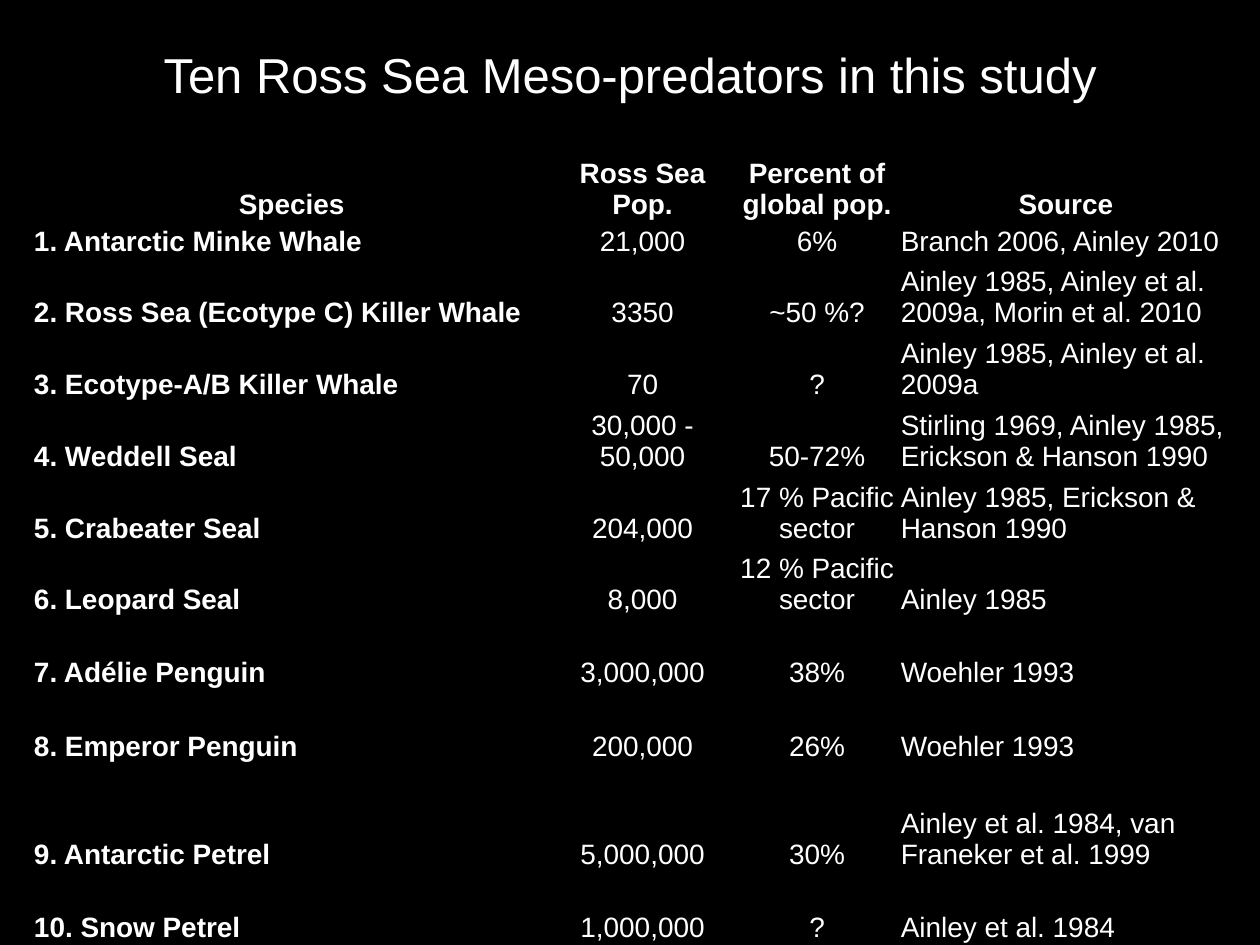
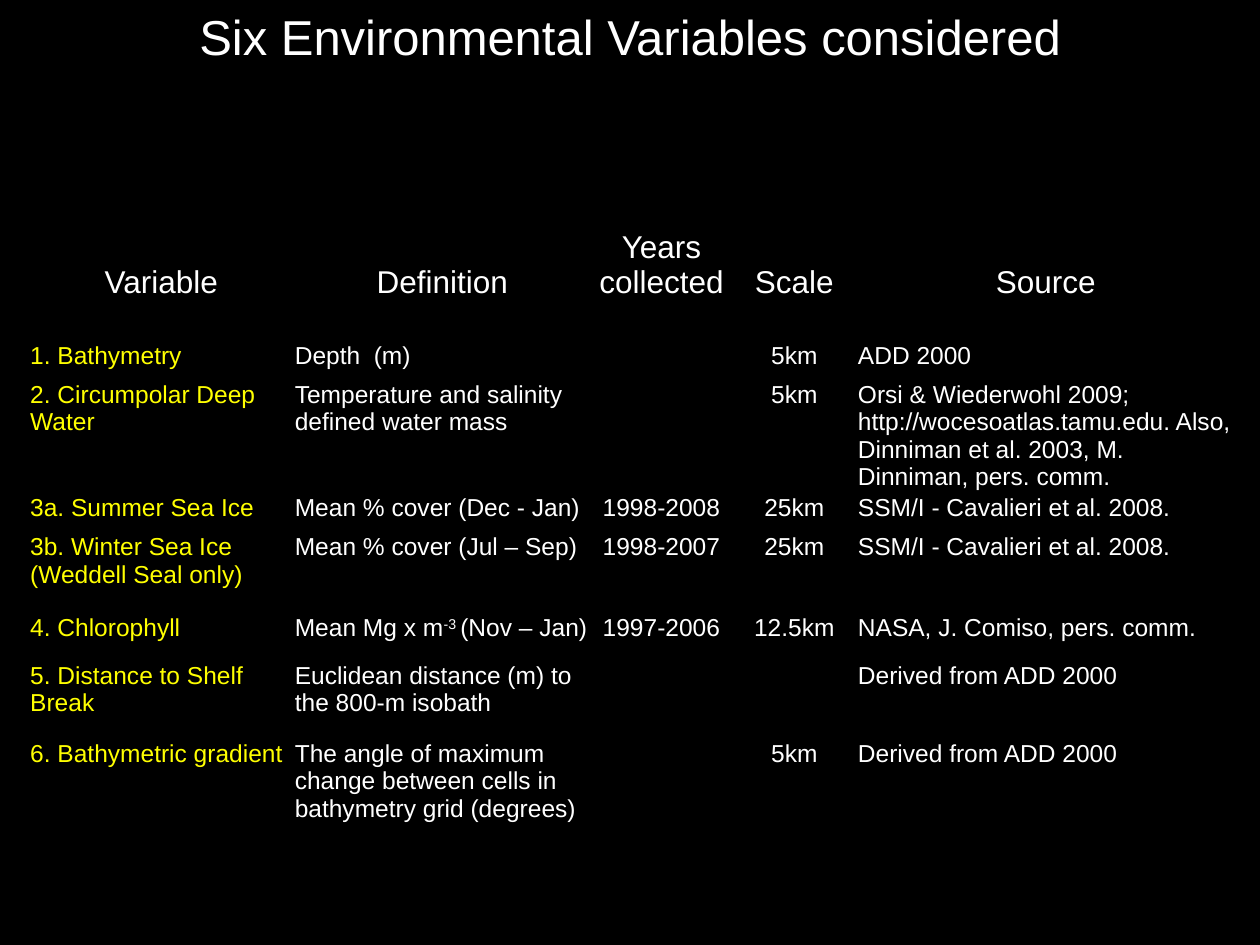
from lxml import etree
from pptx import Presentation
from pptx.dml.color import RGBColor
from pptx.enum.text import MSO_ANCHOR, PP_ALIGN
from pptx.oxml.ns import qn
from pptx.util import Inches, Pt

LEFT, CENTER = PP_ALIGN.LEFT, PP_ALIGN.CENTER
TOP, BOTTOM = MSO_ANCHOR.TOP, MSO_ANCHOR.BOTTOM

COLORS = {"background": "000000", "text": "FFFFFF", "variable": "FFFF00"}
FONT = "Arial"
TITLE_SIZE = 28
NO_STYLE_NO_GRID = "{2D5ABB26-0587-4C30-8999-92F81FD0307C}"
CELL_MARGINS = {"margin_left": 0.01, "margin_right": 0.01, "margin_top": 0.01, "margin_bottom": 0}
TITLE_ONLY_LAYOUT = 5

GAP = ("", "", "", "")
PREDATORS = [
    ("Species", "Ross Sea Pop.", "Percent of global pop.", "Source"),
    ("1. Antarctic Minke Whale", "21,000", "6%", "Branch 2006, Ainley 2010"),
    ("2. Ross Sea (Ecotype C) Killer Whale", "3350", "~50 %?",
     "Ainley 1985, Ainley et al. 2009a, Morin et al. 2010"),
    ("3. Ecotype-A/B Killer Whale", "70", "?", "Ainley 1985, Ainley et al. 2009a"),
    ("4. Weddell Seal", "30,000 - 50,000", "50-72%",
     "Stirling 1969, Ainley 1985, Erickson & Hanson 1990"),
    ("5. Crabeater Seal", "204,000", "17 % Pacific sector", "Ainley 1985, Erickson & Hanson 1990"),
    ("6. Leopard Seal", "8,000", "12 % Pacific sector", "Ainley 1985"),
    GAP,
    ("7. Adélie Penguin", "3,000,000", "38%", "Woehler 1993"),
    GAP,
    ("8. Emperor Penguin", "200,000", "26%", "Woehler 1993"),
    GAP,
    ("9. Antarctic Petrel", "5,000,000", "30%", "Ainley et al. 1984, van Franeker et al. 1999"),
    GAP,
    ("10. Snow Petrel", "1,000,000", "?", "Ainley et al. 1984"),
]
# A tuple in a cell holds runs; every second run is superscript.
VARIABLES = [
    ("", "Definition", "Years collected", "Scale", "Source"),
    ("Variable", "", "", "", ""),
    ("", "", "", "", ""),
    ("1. Bathymetry", "Depth  (m)", "", "5km", "ADD 2000"),
    ("2. Circumpolar Deep Water", "Temperature and salinity defined water mass", "", "5km",
     "Orsi & Wiederwohl 2009; http://wocesoatlas.tamu.edu. Also, "
     "Dinniman et al. 2003, M. Dinniman, pers. comm."),
    ("3a. Summer Sea Ice", "Mean % cover (Dec - Jan)", "1998-2008", "25km",
     "SSM/I - Cavalieri et al. 2008."),
    ("3b. Winter Sea Ice (Weddell Seal only)", "Mean % cover (Jul – Sep)", "1998-2007", "25km",
     "SSM/I - Cavalieri et al. 2008."),
    ("4. Chlorophyll", ("Mean Mg x m", "-3 ", "(Nov – Jan)"), "1997-2006", "12.5km",
     "NASA, J. Comiso, pers. comm."),
    ("5. Distance to Shelf Break", "Euclidean distance (m) to the 800-m isobath", "", "",
     "Derived from ADD 2000"),
    ("6. Bathymetric gradient",
     "The angle of maximum change between cells in bathymetry grid (degrees)", "", "5km",
     "Derived from ADD 2000"),
]

SHORT_ROW, TALL_ROW = 0.29, 0.57
TALL_PREDATOR_ROWS = {0, 2, 3, 4, 5, 6, 12}

SLIDES = [
    {
        "title": "Ten Ross Sea Meso-predators in this study",
        "title_box": (0.5, 0.3, 9, 1.25),
        "rows": PREDATORS,
        "origin": (0.26, 1.18),
        "widths": [4.11, 1.46, 1.31, 2.64],
        "heights": [TALL_ROW if index in TALL_PREDATOR_ROWS else SHORT_ROW
                    for index in range(len(PREDATORS))],
        "header_rows": 1,
        "merged_columns": (),
        "centered_columns": (1, 2),
        "header": {"size": 16, "bold": True},
        "body": {"size": 16, "bold": False},
        "first_column": {"bold": True},
        "body_anchor": BOTTOM,
    },
    {
        "title": "Six Environmental Variables considered",
        "title_box": (0, 0, 10, 0.57),
        "rows": VARIABLES,
        "origin": (0.23, 1.5),
        "widths": [2.1, 2.36, 1.12, 0.99, 3],
        "heights": [0.31, 0.32, 0.32, 0.31, 0.9, 0.31, 0.64, 0.38, 0.62, 0.9],
        "header_rows": 2,
        "merged_columns": (1, 2, 3, 4),
        "centered_columns": (2, 3),
        "header": {"size": 18, "bold": False},
        "body": {"size": 14, "bold": False},
        "first_column": {"color": "variable"},
        "body_anchor": TOP,
    },
]


def format_font(font, size, bold=False, color="text"):
    for name, value in {"name": FONT, "size": Pt(size), "bold": bold}.items():
        setattr(font, name, value)
    font.color.rgb = RGBColor.from_string(COLORS[color])


def add_title(slide, text, box):
    title = slide.shapes.title
    title.left, title.top, title.width, title.height = map(Inches, box)
    frame = title.text_frame
    frame.text = text
    frame.vertical_anchor = TOP
    frame.word_wrap = True
    paragraph = frame.paragraphs[0]
    paragraph.alignment = CENTER
    format_font(paragraph.runs[0].font, TITLE_SIZE)


def fill_cell(cell, content, style, alignment, anchor):
    cell.fill.background()
    cell.vertical_anchor = anchor
    for name, value in CELL_MARGINS.items():
        setattr(cell, name, Inches(value))
    paragraph = cell.text_frame.paragraphs[0]
    paragraph.alignment = alignment
    if not content:
        # The end mark sets the line height of an empty cell.
        end_mark = etree.SubElement(paragraph._p, qn("a:endParaRPr"))
        end_mark.set("sz", str(style["size"] * 100))
        return
    parts = (content,) if isinstance(content, str) else content
    for index, part in enumerate(parts):
        run = paragraph.add_run()
        run.text = part
        format_font(run.font, **style)
        if index % 2:
            run.font._element.set("baseline", "30000")


def add_data_table(slide, content):
    rows, widths, heights = content["rows"], content["widths"], content["heights"]
    box = (*content["origin"], sum(widths), sum(heights))
    graphic_frame = slide.shapes.add_table(len(rows), len(widths), *map(Inches, box))
    table = graphic_frame.table
    table.horz_banding = False
    next(graphic_frame._element.iter(qn("a:tableStyleId"))).text = NO_STYLE_NO_GRID
    for column, width in zip(table.columns, widths):
        column.width = Inches(width)
    for row, height in zip(table.rows, heights):
        row.height = Inches(height)

    for row_index, row in enumerate(rows):
        is_header = row_index < content["header_rows"]
        for column_index, text in enumerate(row):
            style = dict(content["header"] if is_header else content["body"])
            if column_index == 0 and not is_header:
                style.update(content["first_column"])
            centered = is_header or column_index in content["centered_columns"]
            fill_cell(table.cell(row_index, column_index), text, style,
                      CENTER if centered else LEFT,
                      BOTTOM if is_header else content["body_anchor"])

    for column_index in content["merged_columns"]:
        last_header_cell = table.cell(content["header_rows"] - 1, column_index)
        table.cell(0, column_index).merge(last_header_cell)


def main():
    presentation = Presentation()
    presentation.slide_width, presentation.slide_height = Inches(10), Inches(7.5)
    background = presentation.slide_master.background.fill
    background.solid()
    background.fore_color.rgb = RGBColor.from_string(COLORS["background"])
    layout = presentation.slide_layouts[TITLE_ONLY_LAYOUT]
    for content in SLIDES:
        slide = presentation.slides.add_slide(layout)
        add_title(slide, content["title"], content["title_box"])
        add_data_table(slide, content)
    presentation.save("out.pptx")


if __name__ == "__main__":
    main()
